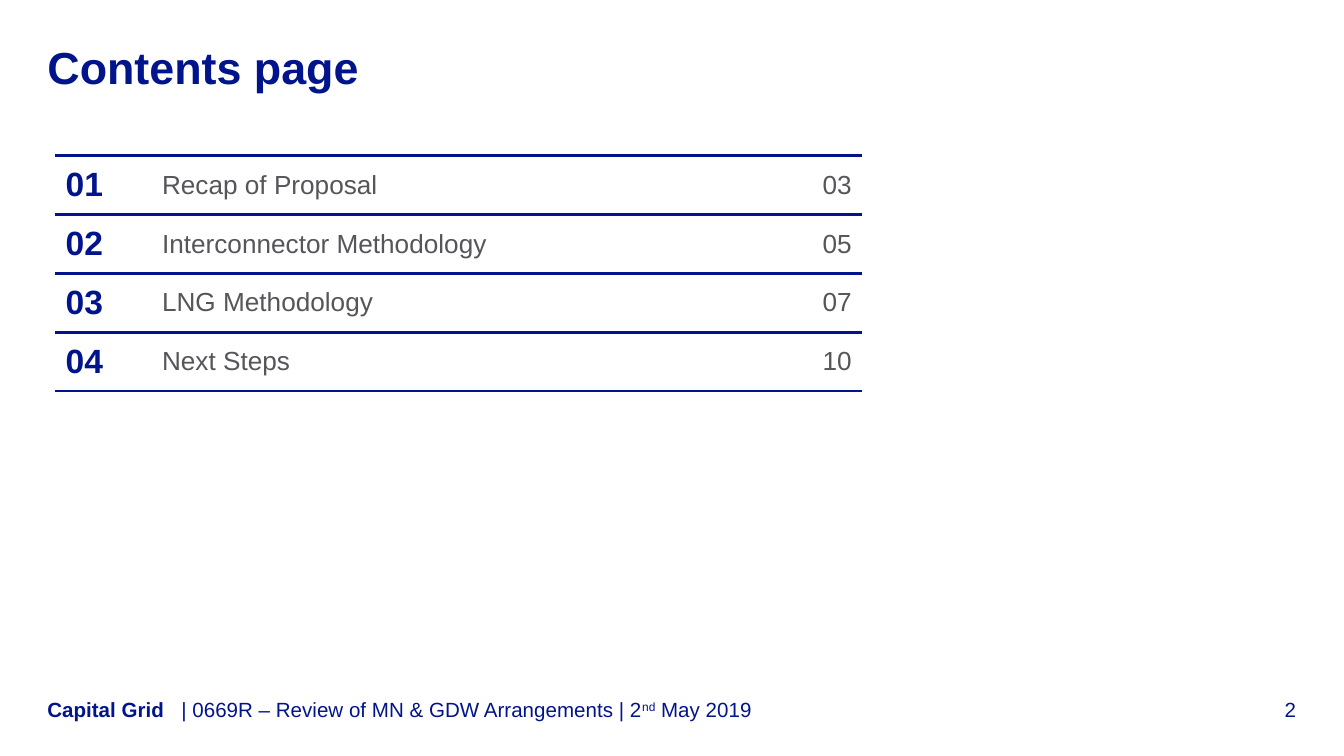
from lxml import etree
from pptx import Presentation
from pptx.dml.color import RGBColor
from pptx.enum import text as t
from pptx.oxml import ns
from pptx.util import Pt

NAVY = RGBColor(0x00, 0x14, 0x8C)
GREY = RGBColor(0x55, 0x55, 0x5A)
FONT = "Arial"
LEFT, RIGHT = t.PP_ALIGN.LEFT, t.PP_ALIGN.RIGHT
TOPICS = [
    ("Recap of Proposal", "03"),
    ("Interconnector Methodology", "05"),
    ("LNG Methodology", "07"),
    ("Next Steps", "10"),
]
COLS = (51.6, 320.4, 60.5)
ROW = 31.6
SIDE, EDGE = 5.7, 4.5


def style(run, size, color, bold=False):
    font = run.font
    font.name, font.size, font.bold = FONT, Pt(size), bold
    font.color.rgb = color


def add_text(slide, box, parts, size, bold=False, align=LEFT,
             anchor=t.MSO_ANCHOR.BOTTOM):
    frame = slide.shapes.add_textbox(*map(Pt, box)).text_frame
    frame.word_wrap = True
    frame.vertical_anchor = anchor
    frame.margin_left = frame.margin_right = 0
    frame.margin_top = frame.margin_bottom = 0
    para = frame.paragraphs[0]
    para.alignment = align
    for part in parts:
        run = para.add_run()
        run.text = part
        style(run, size, NAVY, bold)
    return para


def add_rules(cell):
    props = cell._tc.get_or_add_tcPr()
    for side in ("lnL", "lnR"):
        line = etree.SubElement(props, ns.qn("a:" + side), w="0")
        etree.SubElement(line, ns.qn("a:noFill"))
    for side in ("lnT", "lnB"):
        line = etree.SubElement(props, ns.qn("a:" + side), w=str(Pt(1.5)))
        fill = etree.SubElement(line, ns.qn("a:solidFill"))
        etree.SubElement(fill, ns.qn("a:srgbClr"), val=str(NAVY))


def fill_cell(cell, words, size, color, bold, align):
    add_rules(cell)
    cell.fill.background()
    cell.vertical_anchor = t.MSO_ANCHOR.MIDDLE
    cell.margin_left = cell.margin_right = Pt(SIDE)
    cell.margin_top = cell.margin_bottom = Pt(EDGE)
    para = cell.text_frame.paragraphs[0]
    para.text = words
    para.alignment = align
    style(para.runs[0], size, color, bold)


def add_contents(slide, left, top):
    count = len(TOPICS)
    table = slide.shapes.add_table(
        count, len(COLS), Pt(left), Pt(top), Pt(sum(COLS)), Pt(ROW * count)
    ).table
    table.first_row = table.horz_banding = False
    for col, width in zip(table.columns, COLS):
        col.width = Pt(width)
    for i, (topic, page) in enumerate(TOPICS):
        table.rows[i].height = Pt(ROW)
        fill_cell(table.cell(i, 0), f"{i + 1:02}", 18, NAVY, True, LEFT)
        fill_cell(table.cell(i, 1), topic, 14, GREY, False, LEFT)
        fill_cell(table.cell(i, 2), page, 14, GREY, False, RIGHT)


def add_footer(slide):
    top, high = 373, 13.7
    add_text(slide, (652.5, top, 41.8, high), ["2"], 11, align=RIGHT)
    add_text(slide, (25.4, top, 72, high), ["Capital Grid"], 11, bold=True)
    parts = ["| 0669R – Review of MN & GDW Arrangements | 2", "nd", " May 2019"]
    para = add_text(slide, (97.2, top, 540, high), parts, 11)
    para.runs[1].font._element.set("baseline", "30000")


def main():
    deck = Presentation()
    deck.slide_width, deck.slide_height = Pt(720), Pt(405)
    slide = deck.slides.add_slide(deck.slide_layouts[6])
    add_text(slide, (25.4, 18.8, 668.9, 33.8), ["Contents page"], 24,
             bold=True, anchor=t.MSO_ANCHOR.MIDDLE)
    add_contents(slide, 29.5, 83.3)
    add_footer(slide)
    deck.save("out.pptx")


if __name__ == "__main__":
    main()
